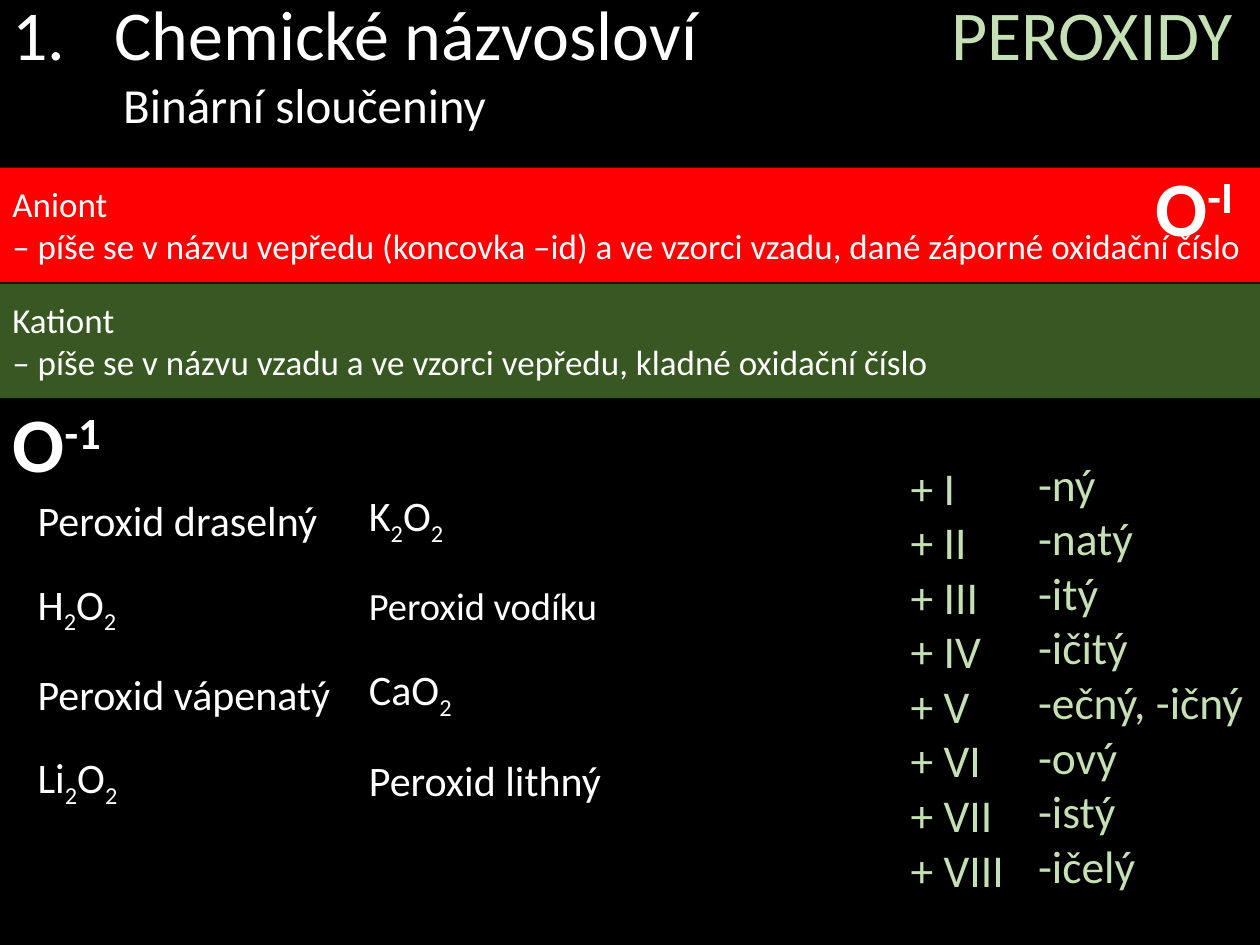
from pptx import Presentation
from pptx.dml.color import RGBColor
from pptx.enum.shapes import MSO_SHAPE as Shape
from pptx.enum.text import MSO_ANCHOR as Anchor, PP_ALIGN as Align
from pptx.oxml.ns import qn
from pptx.util import Inches, Pt
from lxml.etree import SubElement

BLACK, WHITE, RED = "000000", "FFFFFF", "FF0000"
DARK_GREEN, LIGHT_GREEN = "385723", "C5E0B4"


def color(value):
    return RGBColor.from_string(value)


def formula(text):
    """Split a formula into runs, with its digits as subscripts."""
    return [(char, {"baseline": -25} if char.isdigit() else {}) for char in text]


class SlideBuilder:
    font = "Calibri"

    def __init__(self, slide):
        self.slide = slide

    def background(self, fill):
        background = self.slide.background.fill
        background.solid()
        background.fore_color.rgb = color(fill)

    def add_text(self, shape, paragraphs, size, text_color=WHITE, bold=None):
        """Each paragraph is a string or a list of (text, format) runs."""
        frame = shape.text_frame
        for name, value in {"word_wrap": True, "vertical_anchor": Anchor.MIDDLE}.items():
            setattr(frame, name, value)
        for index, runs in enumerate(paragraphs):
            paragraph = frame.add_paragraph() if index else frame.paragraphs[0]
            paragraph.alignment = Align.LEFT
            for text, changes in [(runs, {})] if isinstance(runs, str) else runs:
                run = paragraph.add_run()
                run.text = text
                values = {"name": self.font, "size": Pt(changes.get("size", size)), "bold": bold}
                for name, value in values.items():
                    setattr(run.font, name, value)
                run.font.color.rgb = color(changes.get("color", text_color))
                if "baseline" in changes:
                    run.font._element.set("baseline", str(changes["baseline"] * 1000))
        return shape

    def box(self, left, top, width, height, paragraphs, size, fill=BLACK, line=None, **style):
        shape = self.slide.shapes.add_shape(
            Shape.RECTANGLE, Inches(left), Inches(top), Inches(width), Inches(height))
        shape.shadow.inherit = False
        shape.fill.solid()
        shape.fill.fore_color.rgb = color(fill)
        if line:
            shape.line.color.rgb = color(line)
            shape.line.width = Pt(1)
        else:
            shape.line.fill.background()
        return self.add_text(shape, paragraphs, size, **style)

    def label(self, left, top, width, height, paragraphs, size, **style):
        shape = self.slide.shapes.add_textbox(
            Inches(left), Inches(top), Inches(width), Inches(height))
        return self.add_text(shape, paragraphs, size, **style)

    def indent(self, paragraph, left, first=0):
        properties = paragraph._p.get_or_add_pPr()
        properties.set("marL", str(Inches(left)))
        properties.set("indent", str(Inches(first)))
        return properties

    def number(self, paragraph, indent, tab):
        """Number a paragraph and give it one tab stop."""
        properties = self.indent(paragraph, indent, -indent)
        SubElement(properties, qn("a:buFont"), typeface="+mj-lt")
        SubElement(properties, qn("a:buAutoNum"), type="arabicPeriod")
        tabs = SubElement(properties, qn("a:tabLst"))
        SubElement(tabs, qn("a:tab"), pos=str(Inches(tab)), algn="l")


def main():
    presentation = Presentation()
    presentation.slide_width, presentation.slide_height = Inches(10), Inches(7.5)
    slide = presentation.slides.add_slide(presentation.slide_layouts[6])
    builder = SlideBuilder(slide)
    builder.background(BLACK)

    # Heading
    heading = builder.box(0, 0, 10, 1.65, [
        [("Chemické názvosloví\t", {}), ("PEROXIDY", {"color": LIGHT_GREEN})],
        [("Binární sloučeniny", {"size": 28})],
    ], 40, line=BLACK)
    frame = heading.text_frame
    frame.margin_top, frame.margin_bottom = 0, Inches(0.67)
    title, subtitle = frame.paragraphs
    builder.number(title, 0.81, 7.45)
    builder.indent(subtitle, 0.88)

    # Anion and cation bands
    bands = [
        (1.33, RED, "Aniont", "– píše se v názvu vepředu (koncovka –id) "
                              "a ve vzorci vzadu, dané záporné oxidační číslo"),
        (2.25, DARK_GREEN, "Kationt", "– píše se v názvu vzadu a ve vzorci vepředu, "
                                      "kladné oxidační číslo"),
    ]
    for top, fill, name, rule in bands:
        builder.box(0, top, 10.06, 0.91, [name, rule], 20, fill=fill)

    # Oxidation numbers and their endings
    numerals = ["I", "II", "III", "IV", "V", "VI", "VII", "VIII"]
    endings = ["-ný", "-natý", "-itý", "-ičitý", "-ečný, -ičný", "-ový", "-istý", "-ičelý"]
    builder.box(7.13, 3.61, 1.43, 3.54, [f"+ {numeral}" for numeral in numerals], 26,
                text_color=LIGHT_GREEN)
    builder.box(8.14, 3.58, 1.86, 3.54, endings, 26, text_color=LIGHT_GREEN)

    # Oxygen labels
    for left, top, width, height, charge in [(9.07, 1.14, 1.65, 0.98, "-I"),
                                             (0, 3.05, 1.08, 0.91, "-1")]:
        builder.label(left, top, width, height,
                      [[("O", {}), (charge, {"baseline": 30})]], 44, bold=True)

    # Exercises and their answers
    exercises = ["Peroxid draselný", formula("H2O2"), "Peroxid vápenatý", formula("Li2O2")]
    answers = [formula("K2O2"), [("Peroxid vodíku", {"size": 22})],
               formula("CaO2"), "Peroxid lithný"]
    row_height = 0.69
    for left, top, width, column in [(0.2, 3.78, 3.71, exercises), (2.83, 3.77, 2.1, answers)]:
        for row, text in enumerate(column):
            builder.box(left, top + row * row_height, width, row_height, [text], 24)

    presentation.save("out.pptx")


if __name__ == "__main__":
    main()
